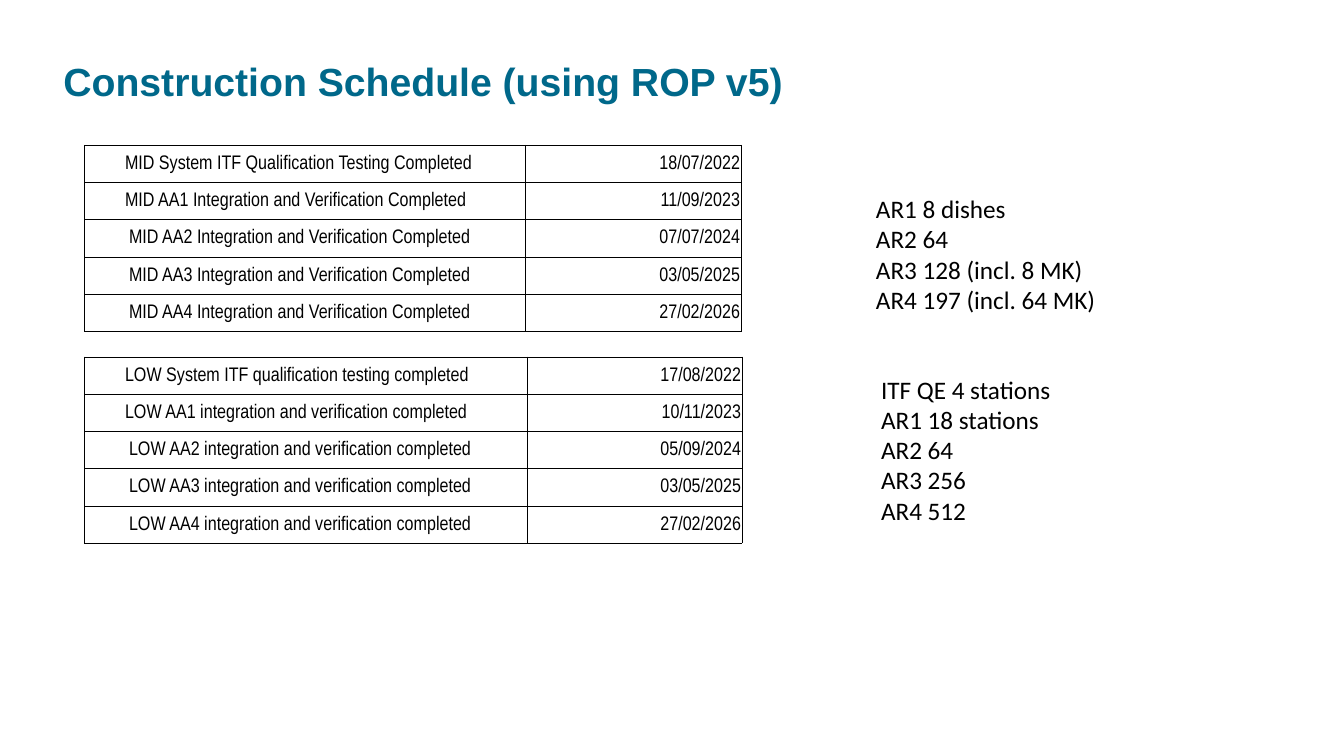
from dataclasses import dataclass

import pptx
import pptx.dml.color
import pptx.enum.text
import pptx.oxml
import pptx.oxml.ns
import pptx.util
from pptx.util import Inches

ROW_HEIGHT = 0.37
BLACK, WHITE, TEAL = "000000", "FFFFFF", "00688A"
ALIGN = pptx.enum.text.PP_ALIGN
ANCHOR = pptx.enum.text.MSO_ANCHOR
AUTO_SIZE = pptx.enum.text.MSO_AUTO_SIZE


@dataclass
class Milestone:
    name: str
    date: str
    indent: float = 0.44


@dataclass
class Schedule:
    left: float
    top: float
    column_widths: tuple[float, float]
    milestones: list[Milestone]


@dataclass
class TextBlock:
    left: float
    top: float
    width: float
    height: float
    lines: list[str]
    font: dict
    wrap: bool = False
    line_spacing: float = 1.0


CELL_FONT = {"name": "Arial Narrow", "size": pptx.util.Pt(14)}
NOTE_FONT = {"name": "Calibri", "size": pptx.util.Pt(18)}
TITLE_FONT = {"name": "Arial", "size": pptx.util.Pt(28), "bold": True}

SCHEDULES = [
    Schedule(0.84, 1.44, (4.37, 2.14), [
        Milestone("MID System ITF Qualification Testing Completed", "18/07/2022", 0.4),
        Milestone("MID AA1 Integration and Verification Completed", "11/09/2023", 0.4),
        Milestone("MID AA2 Integration and Verification Completed", "07/07/2024"),
        Milestone("MID AA3 Integration and Verification Completed", "03/05/2025"),
        Milestone("MID AA4 Integration and Verification Completed", "27/02/2026"),
    ]),
    Schedule(0.84, 3.54, (4.39, 2.13), [
        Milestone("LOW System ITF qualification testing completed", "17/08/2022", 0.4),
        Milestone("LOW AA1 integration and verification completed", "10/11/2023", 0.4),
        Milestone("LOW AA2 integration and verification completed", "05/09/2024"),
        Milestone("LOW AA3 integration and verification completed", "03/05/2025"),
        Milestone("LOW AA4 integration and verification completed", "27/02/2026"),
    ]),
]

TITLE = TextBlock(0.53, 0.57, 9.15, 0.68, ["Construction Schedule (using ROP v5)"],
                  TITLE_FONT, wrap=True, line_spacing=0.9)
NOTES = [
    TextBlock(8.59, 1.87, 2.4, 1.31,
              ["AR1 8 dishes", "AR2 64", "AR3 128 (incl. 8 MK)", "AR4 197 (incl. 64 MK)"],
              NOTE_FONT),
    TextBlock(8.64, 3.66, 1.9, 1.62,
              ["ITF QE 4 stations", "AR1 18 stations", "AR2 64", "AR3 256", "AR4 512"],
              NOTE_FONT),
]


def color(value: str) -> pptx.dml.color.RGBColor:
    return pptx.dml.color.RGBColor.from_string(value)


def set_attributes(target, values: dict) -> None:
    for name, value in values.items():
        setattr(target, name, value)


def format_font(paragraph, font: dict, font_color: str) -> None:
    set_attributes(paragraph.font, font)
    paragraph.font.color.rgb = color(font_color)


def add_borders(cell) -> None:
    properties = cell._tc.get_or_add_tcPr()
    for side in ("lnL", "lnR", "lnT", "lnB"):
        properties.append(pptx.oxml.parse_xml(
            f'<a:{side} {pptx.oxml.ns.nsdecls("a")} w="6350"><a:solidFill>'
            f'<a:srgbClr val="{BLACK}"/></a:solidFill></a:{side}>'))


def fill_cell(cell, text: str, alignment, indent: float) -> None:
    add_borders(cell)
    cell.fill.solid()
    cell.fill.fore_color.rgb = color(WHITE)
    set_attributes(cell, {
        "margin_left": Inches(indent), "margin_right": Inches(0.01),
        "margin_top": Inches(0.01), "margin_bottom": 0,
        "vertical_anchor": ANCHOR.MIDDLE,
    })
    paragraph = cell.text_frame.paragraphs[0]
    paragraph.text = text
    paragraph.alignment = alignment
    format_font(paragraph, CELL_FONT, BLACK)


def draw_schedule(slide, schedule: Schedule) -> None:
    count = len(schedule.milestones)
    table = slide.shapes.add_table(
        count, 2, Inches(schedule.left), Inches(schedule.top),
        Inches(sum(schedule.column_widths)), Inches(ROW_HEIGHT * count)).table
    set_attributes(table, {"first_row": False, "horz_banding": False})
    for column, width in zip(table.columns, schedule.column_widths):
        column.width = Inches(width)
    for row, milestone in zip(table.rows, schedule.milestones):
        row.height = Inches(ROW_HEIGHT)
        fill_cell(row.cells[0], milestone.name, ALIGN.LEFT, milestone.indent)
        fill_cell(row.cells[1], milestone.date, ALIGN.RIGHT, 0.01)


def draw_text(slide, block: TextBlock, font_color: str) -> None:
    shape = slide.shapes.add_textbox(Inches(block.left), Inches(block.top),
                                     Inches(block.width), Inches(block.height))
    frame = shape.text_frame
    set_attributes(frame, {
        "word_wrap": block.wrap,
        "auto_size": AUTO_SIZE.NONE if block.wrap else AUTO_SIZE.SHAPE_TO_FIT_TEXT,
    })
    frame.text = "\n".join(block.lines)
    for paragraph in frame.paragraphs:
        paragraph.line_spacing = block.line_spacing
        format_font(paragraph, block.font, font_color)


def main() -> None:
    presentation = pptx.Presentation()
    presentation.slide_width = Inches(13.33)
    presentation.slide_height = Inches(7.5)
    slide = presentation.slides.add_slide(presentation.slide_layouts[6])

    # Title
    draw_text(slide, TITLE, TEAL)

    # Milestone tables
    for schedule in SCHEDULES:
        draw_schedule(slide, schedule)

    # Array sizes beside the tables
    for note in NOTES:
        draw_text(slide, note, BLACK)

    presentation.save("out.pptx")


if __name__ == "__main__":
    main()
